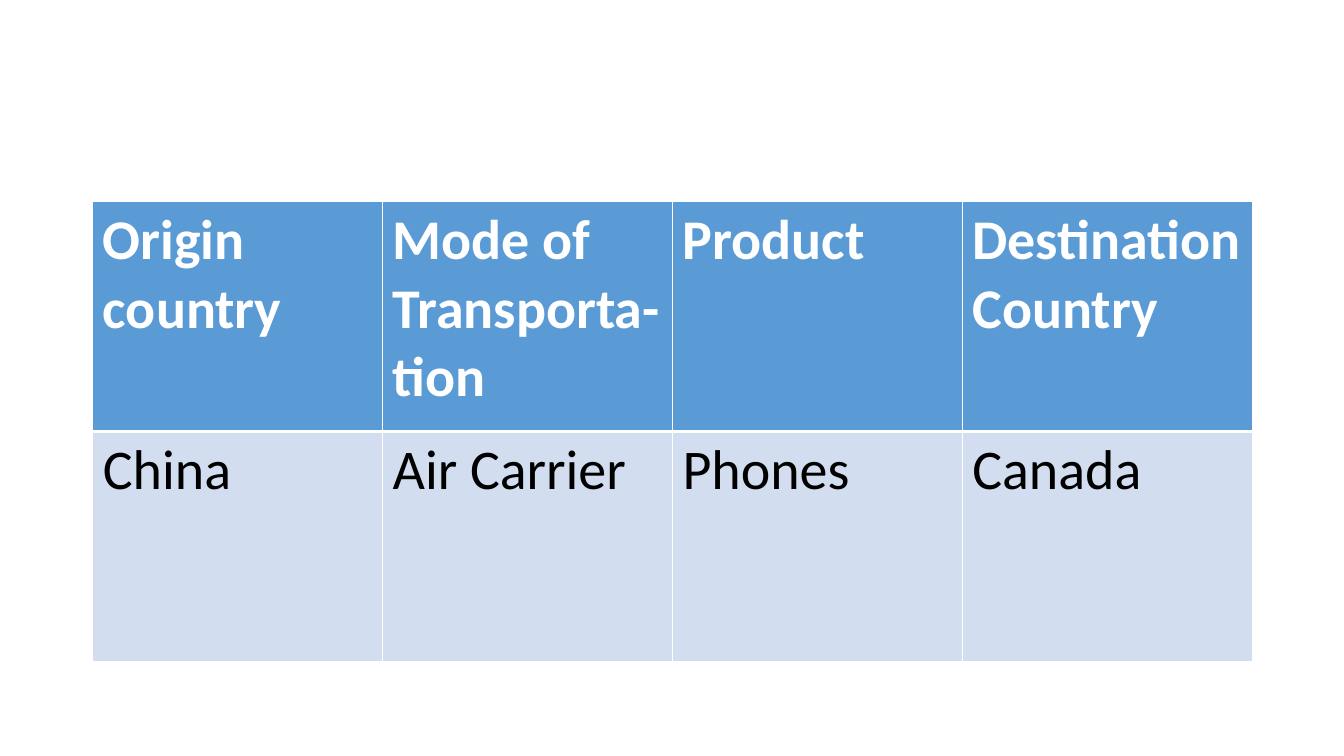
from lxml.etree import SubElement as Sub
from pptx import Presentation
from pptx.dml.color import RGBColor
from pptx.oxml.ns import qn
from pptx.util import Inches, Pt

WHITE = RGBColor(0xFF, 0xFF, 0xFF)
BLACK = RGBColor(0, 0, 0)
BLUE = RGBColor(0x5B, 0x9B, 0xD5)
PALE = RGBColor(0xD2, 0xDE, 0xEF)

ROUTES = [
    ["Origin country", "Mode of Transporta-tion", "Product",
     "Destination\nCountry"],
    ["China", "Air Carrier", "Phones", "Canada"],
]


def write(frame, text, size=40, color=BLACK, bold=False, font="Calibri"):
    frame.text = text
    for para in frame.paragraphs:
        for run in para.runs:
            run.font.name = font
            run.font.size = Pt(size)
            run.font.bold = bold
            run.font.color.rgb = color


def edge(cell, base=1, color=WHITE):
    """Draw the cell borders, 1 pt wide except for the bottom one."""
    props = cell._tc.get_or_add_tcPr()
    for side, width in (("L", 1), ("R", 1), ("T", 1), ("B", base)):
        line = Sub(props, qn(f"a:ln{side}"), w=str(Pt(width)))
        fill = Sub(line, qn("a:solidFill"))
        Sub(fill, qn("a:srgbClr"), val=str(color))


def paint(cell, color):
    cell.fill.solid()
    cell.fill.fore_color.rgb = color


def add_grid(slide, rows, left, top, width, height):
    shape = slide.shapes.add_table(len(rows), len(rows[0]), left, top,
                                   width, height)
    for r, row in enumerate(rows):
        head = r == 0
        for c, text in enumerate(row):
            cell = shape.table.cell(r, c)
            edge(cell, base=3 if head else 1)
            paint(cell, BLUE if head else PALE)
            write(cell.text_frame, text, bold=head,
                  color=WHITE if head else BLACK)


def main():
    deck = Presentation()
    deck.slide_width = Inches(13.33)
    deck.slide_height = Inches(7.5)
    slide = deck.slides.add_slide(deck.slide_layouts[6])
    add_grid(slide, ROUTES, Inches(0.92), Inches(2), Inches(11.5),
             Inches(4.56))
    deck.save("out.pptx")


if __name__ == "__main__":
    main()
